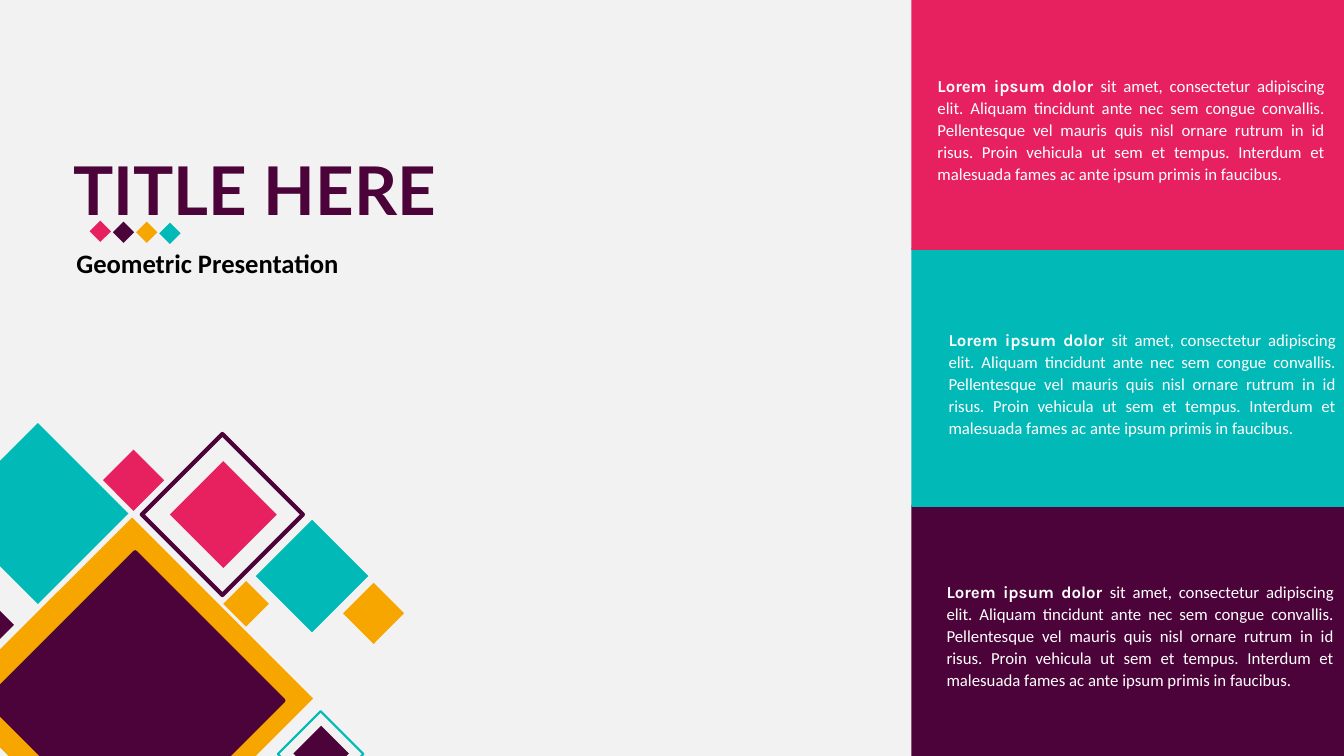
from pptx import Presentation
from pptx.dml.color import RGBColor
from pptx.enum.shapes import MSO_SHAPE
from pptx.enum.text import MSO_AUTO_SIZE, PP_ALIGN
from pptx.util import Inches, Pt

RECTANGLE = MSO_SHAPE.RECTANGLE
GROW = MSO_AUTO_SIZE.SHAPE_TO_FIT_TEXT
JUSTIFY = PP_ALIGN.JUSTIFY

PINK, TEAL, AMBER, PLUM = "E7205F", "01B9B7", "F7A600", "4C0339"
LEAD = "Lorem ipsum dolor "
BODY = (
    "sit amet, consectetur adipiscing elit. Aliquam tincidunt ante nec sem "
    "congue convallis. Pellentesque vel mauris quis nisl ornare rutrum in id "
    "risus. Proin vehicula ut sem et tempus. Interdum et malesuada fames ac "
    "ante ipsum primis in faucibus."
)


def color(hex_value):
    return RGBColor.from_string(hex_value)


def add_block(left, top, width, height, fill=None, line=None, line_width=0, rotation=0):
    block = slide.shapes.add_shape(
        RECTANGLE, Inches(left), Inches(top), Inches(width), Inches(height))
    block.shadow.inherit = False
    block.rotation = rotation
    if fill:
        block.fill.solid()
        block.fill.fore_color.rgb = color(fill)
    else:
        block.fill.background()
    if line:
        block.line.color.rgb = color(line)
        block.line.width = Pt(line_width)
    else:
        block.line.fill.background()


prs = Presentation()
prs.slide_width, prs.slide_height = Inches(13.33), Inches(7.5)
slide = prs.slides.add_slide(prs.slide_layouts[6])
slide.background.fill.solid()
slide.background.fill.fore_color.rgb = color("F2F2F2")

# Diamond cluster: left, top, side, fill, outline, outline width
diamonds = [
    (0.04, 5.66, 2.54, AMBER, None, 0),
    (-1.02, 5.72, 0.96, PLUM, None, 0),
    (-0.26, 4.46, 1.27, TEAL, None, 0),
    (1.64, 4.54, 1.13, None, PLUM, 3),
    (2.28, 5.83, 0.32, AMBER, None, 0),
    (3.49, 5.87, 0.43, AMBER, None, 0),
    (1.11, 4.55, 0.43, PINK, None, 0),
    (2.7, 5.32, 0.79, TEAL, None, 0),
    (2.88, 7.18, 0.6, None, TEAL, 1.5),
    (2.99, 7.28, 0.39, PLUM, None, 0),
    (0.3, 5.91, 2.08, PLUM, PLUM, 3),
    (1.84, 4.73, 0.75, PINK, None, 0),
]
for left, top, side, fill, line, line_width in diamonds:
    add_block(left, top, side, side, fill, line, line_width, rotation=45)

# Title and subtitle
headings = [
    ("TITLE HERE", 0.63, 1.42, 3.93, 0.91, 48, "Lato", PLUM),
    ("Geometric Presentation", 0.66, 2.4, 2.84, 0.42, 19, "Calibri", "000000"),
]
for text, left, top, width, height, size, font_name, text_color in headings:
    heading = slide.shapes.add_textbox(
        Inches(left), Inches(top), Inches(width), Inches(height))
    frame = heading.text_frame
    frame.word_wrap = False
    frame.auto_size = GROW
    frame.text = text
    font = frame.paragraphs[0].runs[0].font
    font.name, font.size, font.bold = font_name, Pt(size), True
    font.color.rgb = color(text_color)

# Side panels, bottom one at the back
for row, fill in ((2, PLUM), (1, TEAL), (0, PINK)):
    add_block(9.04, -0.09 + 2.55 * row, 4.35, 2.57, fill)

# Panel texts
for left, top in ((9.2, 0.68), (9.31, 3.2), (9.29, 5.7)):
    panel_text = slide.shapes.add_textbox(
        Inches(left), Inches(top), Inches(4.04), Inches(1.2))
    frame = panel_text.text_frame
    frame.word_wrap = True
    frame.auto_size = GROW
    paragraph = frame.paragraphs[0]
    paragraph.alignment = JUSTIFY
    paragraph.line_spacing = 1.1
    for text, font_name, bold in ((LEAD, "Karla", True), (BODY, "Calibri", False)):
        run = paragraph.add_run()
        run.text = text
        run.font.name, run.font.size, run.font.bold = font_name, Pt(12), bold
        run.font.color.rgb = color("FFFFFF")

# Small diamonds under the title
for index, (top, fill) in enumerate(
        ((2.22, PINK), (2.23, PLUM), (2.23, AMBER), (2.24, TEAL))):
    add_block(0.92 + 0.23 * index, top, 0.15, 0.15, fill, rotation=45)

prs.save("out.pptx")
